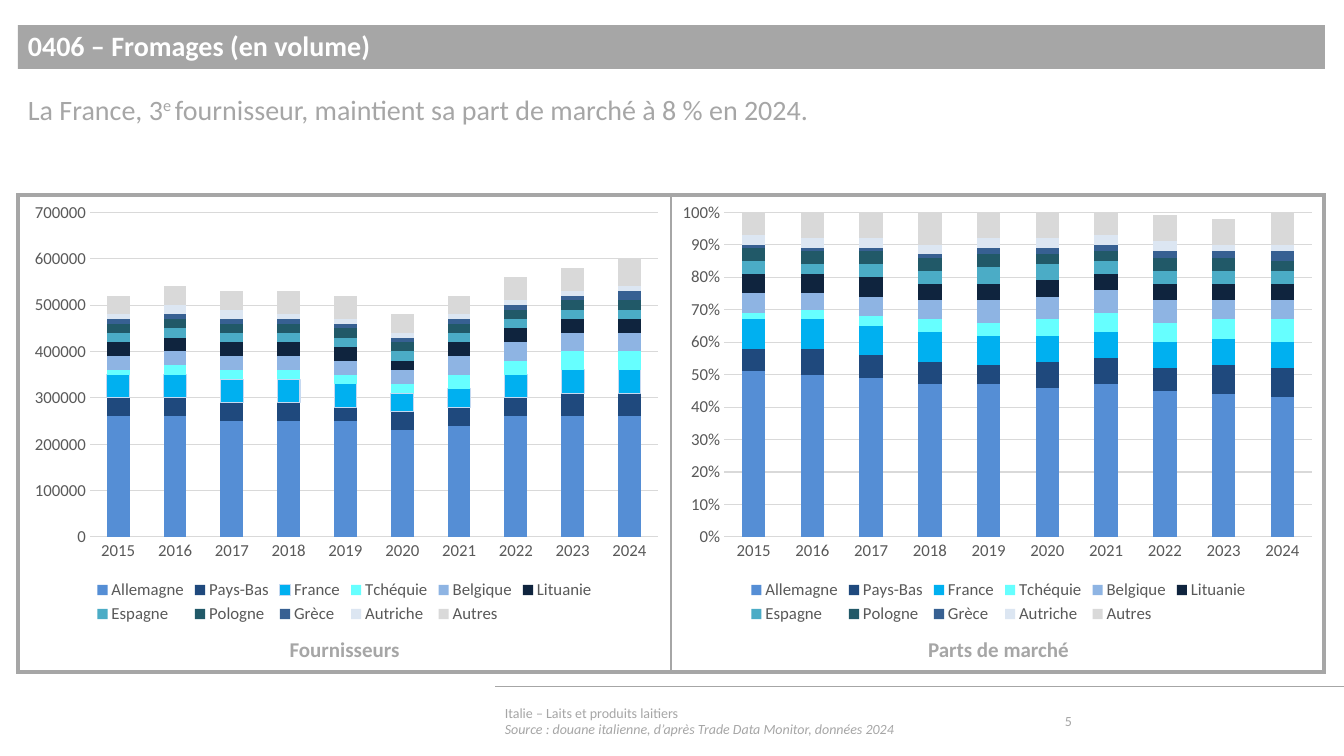
"""Build the slide on Italian cheese imports by supplier."""
from lxml.etree import SubElement
from pptx import Presentation
from pptx.chart.data import CategoryChartData
from pptx.dml.color import RGBColor
from pptx.enum.chart import XL_CHART_TYPE, XL_LEGEND_POSITION, XL_TICK_MARK
from pptx.enum.shapes import MSO_CONNECTOR, MSO_SHAPE
from pptx.enum.text import MSO_ANCHOR, MSO_AUTO_SIZE, PP_ALIGN
from pptx.oxml.ns import qn
from pptx.util import Emu, Pt

EMU_PER_PX = 12192000 / 1344
FONT = "Calibri"
GREY = RGBColor(0xA6, 0xA6, 0xA6)
WHITE = RGBColor(0xFF, 0xFF, 0xFF)
LABEL_GREY = RGBColor(0x59, 0x59, 0x59)
GRID_GREY = RGBColor(0xD9, 0xD9, 0xD9)
PALE_BLUE = RGBColor(0xC6, 0xD9, 0xF1)
SUPPLIER_COLORS = {
    "Allemagne": RGBColor(0x55, 0x8E, 0xD5),
    "Pays-Bas": RGBColor(0x1F, 0x49, 0x7D),
    "France": RGBColor(0x00, 0xB0, 0xF0),
    "Tchéquie": RGBColor(0x66, 0xFF, 0xFF),
    "Belgique": RGBColor(0x8E, 0xB4, 0xE3),
    "Lituanie": RGBColor(0x0F, 0x24, 0x3E),
    "Espagne": RGBColor(0x4B, 0xAC, 0xC6),
    "Pologne": RGBColor(0x21, 0x59, 0x68),
    "Grèce": RGBColor(0x37, 0x60, 0x92),
    "Autriche": RGBColor(0xDC, 0xE6, 0xF2),
    "Autres": RGBColor(0xD9, 0xD9, 0xD9),
}
YEARS = [str(year) for year in range(2015, 2025)]
VOLUMES_10KT = [
    [26, 26, 25, 25, 25, 23, 24, 26, 26, 26],
    [4, 4, 4, 4, 3, 4, 4, 4, 5, 5],
    [5, 5, 5, 5, 5, 4, 4, 5, 5, 5],
    [1, 2, 2, 2, 2, 2, 3, 3, 4, 4],
    [3, 3, 3, 3, 3, 3, 4, 4, 4, 4],
    [3, 3, 3, 3, 3, 2, 3, 3, 3, 3],
    [2] * 10,
    [2] * 10,
    [1] * 9 + [2],
    [1, 2, 2, 1, 1, 1, 1, 1, 1, 1],
    [4, 4, 4, 5, 5, 4, 4, 5, 5, 6],
]
SHARES_PERCENT = [
    [51, 50, 49, 47, 47, 46, 47, 45, 44, 43],
    [7, 8, 7, 7, 6, 8, 8, 7, 9, 9],
    [9, 9, 9, 9, 9, 8, 8, 8, 8, 8],
    [2, 3, 3, 4, 4, 5, 6, 6, 6, 7],
    [6, 5, 6, 6, 7, 7, 7, 7, 6, 6],
    [6, 6, 6, 5, 5, 5, 5, 5, 5, 5],
    [4, 3, 4, 4, 5, 5, 4, 4, 4, 4],
    [4, 4, 4, 4, 4, 3, 3, 4, 4, 3],
    [1, 1, 1, 1, 2, 2, 2, 2, 2, 3],
    [3, 3, 3, 3, 3, 3, 3, 3, 2, 2],
    [7, 8, 8, 10, 9, 8, 8, 8, 8, 10],
]


def px(*lengths):
    """Turn pixel lengths into EMU."""
    return [Emu(round(length * EMU_PER_PX)) for length in lengths]


def set_values(target, values):
    """Set each attribute of the target from a dict."""
    for name, value in values.items():
        setattr(target, name, value)


def style_font(font, color, **values):
    """Give a font the deck typeface, a colour and further values."""
    set_values(font, {"name": FONT, **values})
    font.color.rgb = color


def fill_text(box, paragraphs, color, line_spacing=None, align=PP_ALIGN.LEFT, **values):
    """Write paragraphs, each a list of (text, extra font values, baseline)."""
    frame = box.text_frame
    for index, spans in enumerate(paragraphs):
        para = frame.paragraphs[0] if index == 0 else frame.add_paragraph()
        set_values(para, {"alignment": align, "line_spacing": line_spacing})
        for text, extra, baseline in spans:
            span = para.add_run()
            span.text = text
            style_font(span.font, color, **values, **extra)
            if baseline:
                span._r.get_or_add_rPr().set("baseline", str(baseline))


def add_text(page, bounds, paragraphs, anchor=MSO_ANCHOR.TOP, grow=False, **values):
    """Add a wrapping grey text box."""
    box = page.shapes.add_textbox(*px(*bounds))
    set_values(box.text_frame, {
        "word_wrap": True,
        "vertical_anchor": anchor,
        "auto_size": MSO_AUTO_SIZE.SHAPE_TO_FIT_TEXT if grow else MSO_AUTO_SIZE.NONE,
    })
    fill_text(box, paragraphs, GREY, **values)


def add_title(page, bounds, text):
    """Add the grey title band."""
    band = page.shapes.add_shape(MSO_SHAPE.RECTANGLE, *px(*bounds))
    band.shadow.inherit = False
    band.fill.solid()
    band.fill.fore_color.rgb = GREY
    band.line.fill.background()
    band.text_frame.vertical_anchor = MSO_ANCHOR.MIDDLE
    fill_text(band, [[(text, {}, 0)]], WHITE, line_spacing=0.9, size=Pt(20), bold=True)


def add_rule(page, start_x, end_x, y):
    """Add the thin footer rule."""
    rule = page.shapes.add_connector(MSO_CONNECTOR.STRAIGHT, *px(start_x, y, end_x, y))
    rule.line.color.rgb = GREY
    rule.line.width = Pt(0.5)
    SubElement(rule._element.spPr, qn("a:effectLst"))


def border_cell(cell, widths):
    """Draw grey cell borders, with widths in points by side."""
    properties = cell._tc.get_or_add_tcPr()
    for side, width in widths.items():
        edge = SubElement(properties, qn(f"a:ln{side}"), w=str(Pt(width)))
        fill = SubElement(edge, qn("a:solidFill"))
        SubElement(fill, qn("a:srgbClr"), val=str(GREY))
    cell.fill.background()


def add_frame(page, bounds):
    """Add the two-cell table that frames the charts."""
    table = page.shapes.add_table(1, 2, *px(*bounds)).table
    set_values(table, {"first_row": False, "horz_banding": False})
    border_cell(table.cell(0, 0), {"L": 3, "R": 1, "T": 3, "B": 3})
    border_cell(table.cell(0, 1), {"L": 1, "R": 3, "T": 3, "B": 3})


def place_plot(chart, layout):
    """Fix the inner plot area as fractions of the chart."""
    plot_area = chart._chartSpace.chart.plotArea
    for old in plot_area.findall(qn("c:layout")):
        plot_area.remove(old)
    holder = plot_area.makeelement(qn("c:layout"))
    plot_area.insert(0, holder)
    manual = SubElement(holder, qn("c:manualLayout"))
    entries = {"layoutTarget": "inner", "xMode": "edge", "yMode": "edge", **layout}
    for name, value in entries.items():
        SubElement(manual, qn(f"c:{name}"), val=str(value))


def style_axes(chart, number_format, maximum, step):
    """Format both axes and the grid."""
    for axis in (chart.category_axis, chart.value_axis):
        set_values(axis, {"major_tick_mark": XL_TICK_MARK.NONE,
                          "minor_tick_mark": XL_TICK_MARK.NONE})
        style_font(axis.tick_labels.font, LABEL_GREY, size=Pt(12))
    values = chart.value_axis
    set_values(values, {"minimum_scale": 0, "maximum_scale": maximum, "major_unit": step,
                        "has_major_gridlines": True})
    set_values(values.tick_labels, {"number_format": number_format,
                                    "number_format_is_linked": False})
    values.format.line.fill.background()
    for line in (chart.category_axis.format.line, values.major_gridlines.format.line):
        line.color.rgb = GRID_GREY
        line.width = Pt(0.75)


def add_stack(page, bounds, rows, number_format, maximum, step, layout):
    """Add a stacked column chart of the suppliers and return it."""
    data = CategoryChartData(number_format=number_format)
    data.categories = YEARS
    for supplier, row in zip(SUPPLIER_COLORS, rows):
        data.add_series(supplier, row)
    chart = page.shapes.add_chart(XL_CHART_TYPE.COLUMN_STACKED, *px(*bounds), data).chart
    set_values(chart, {"has_title": False, "has_legend": True})
    set_values(chart.font, {"name": FONT, "size": Pt(12)})
    set_values(chart.legend, {"position": XL_LEGEND_POSITION.BOTTOM, "include_in_layout": False})
    style_font(chart.legend.font, LABEL_GREY, size=Pt(12))
    set_values(chart.plots[0], {"gap_width": 150, "overlap": 100, "vary_by_categories": False})
    for series in chart.plots[0].series:
        series.format.fill.solid()
        series.format.fill.fore_color.rgb = SUPPLIER_COLORS[series.name]
    style_axes(chart, number_format, maximum, step)
    place_plot(chart, layout)
    return chart


def main():
    """Build and save the slide."""
    deck = Presentation()
    deck.slide_width, deck.slide_height = px(1344, 756)
    page = deck.slides.add_slide(deck.slide_layouts[6])
    add_rule(page, 1344, 495, 686)
    add_frame(page, (18, 195, 1306, 477))
    for left, caption in ((18, "Fournisseurs"), (672, "Parts de marché")):
        add_text(page, (left, 632, 653, 35), [[(caption, {}, 0)]], grow=True,
                 align=PP_ALIGN.CENTER, size=Pt(15), bold=True)
    source = "Source : douane italienne, d’après Trade Data Monitor, données 2024"
    footer = [[("Italie – Laits et produits laitiers", {}, 0)], [(source, {"italic": True}, 0)]]
    add_text(page, (495, 701, 547, 40), footer, anchor=MSO_ANCHOR.MIDDLE, size=Pt(10))
    add_text(page, (1055, 701, 100, 40), [[("5", {}, 0)]], anchor=MSO_ANCHOR.MIDDLE, size=Pt(10))
    add_title(page, (18, 25, 1307, 44), "0406 – Fromages (en volume)")
    message = [("La France, 3", {}, 0), ("e ", {}, 30000),
               ("fournisseur, maintient sa part de marché à 8 % en 2024.", {}, 0)]
    add_text(page, (18, 91, 1306, 82), [message], line_spacing=0.9, size=Pt(20))
    volumes = [[value * 10000 for value in row] for row in VOLUMES_10KT]
    shares = [[value / 100 for value in row] for row in SHARES_PERCENT]
    chart = add_stack(page, (18, 195, 653, 433), volumes, "General", 700000, 100000,
                      {"x": 0.11, "y": 0.04, "w": 0.87, "h": 0.75})
    france = chart.plots[0].series[list(SUPPLIER_COLORS).index("France")]
    france.format.line.color.rgb = PALE_BLUE
    france.format.line.width = Pt(0.75)
    add_stack(page, (672, 195, 653, 433), shares, "0%", 1, 0.1,
              {"x": 0.08, "y": 0.04, "w": 0.9, "h": 0.75})
    deck.save("out.pptx")


if __name__ == "__main__":
    main()
